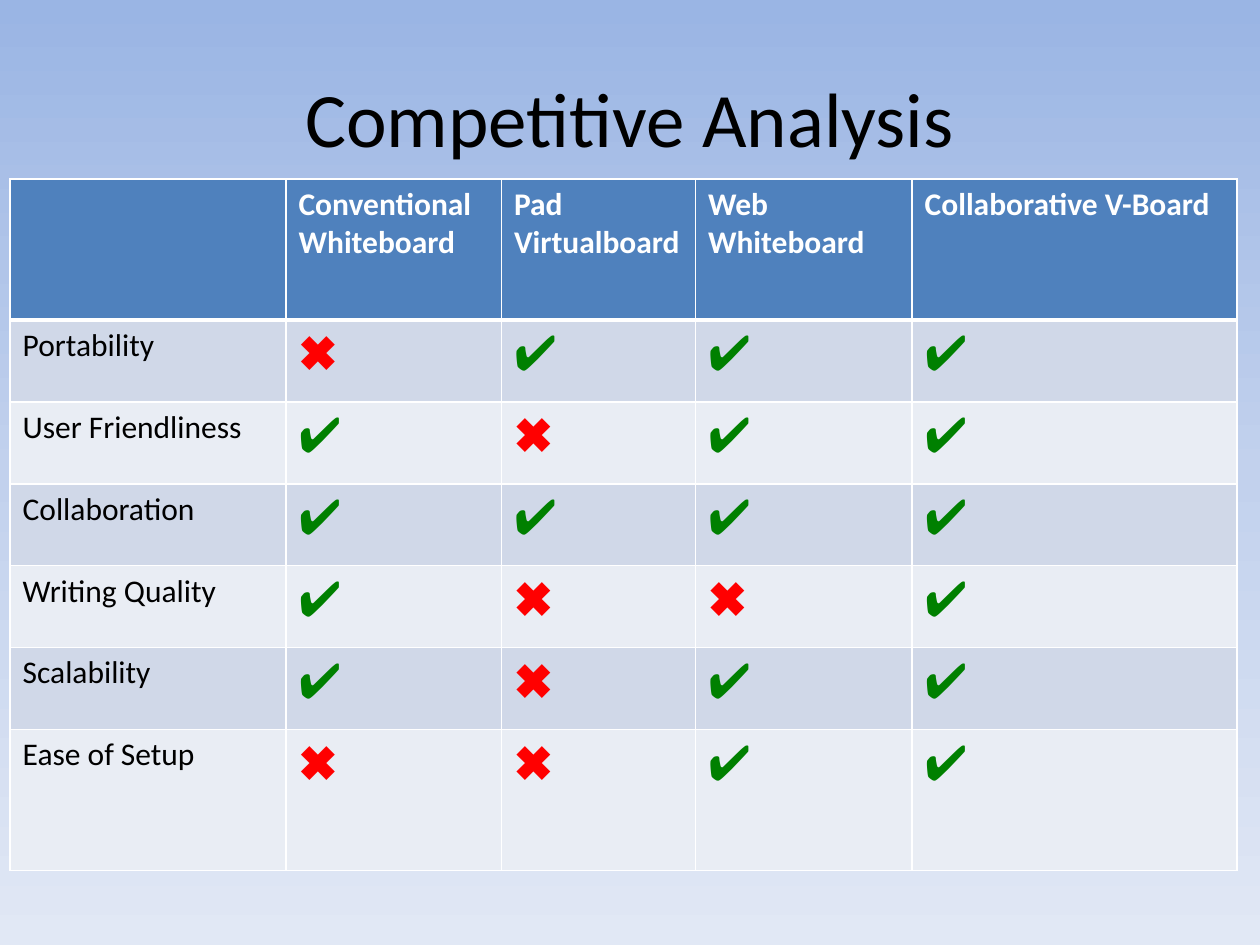
from copy import deepcopy

from lxml.etree import SubElement
from pptx import Presentation
from pptx.dml.color import RGBColor
from pptx.enum.text import MSO_ANCHOR, PP_ALIGN
from pptx.oxml.ns import qn
from pptx.util import Inches, Pt

COLORS = {
    "sky_top": "9AB5E4", "sky_middle": "C2D1ED", "sky_bottom": "E1E8F5",
    "header": "4F81BD", "band_dark": "D0D8E8", "band_light": "E9EDF4",
    "white": "FFFFFF", "black": "000000", "yes": "008000", "no": "FF0000",
}
YES, NO = "✔", "✖"

PRODUCTS = ["", "Conventional Whiteboard", "Pad Virtualboard",
            "Web Whiteboard", "Collaborative V-Board"]
# One letter per product: y = has the feature, n = lacks it
FEATURES = {
    "Portability": "nyyy",
    "User Friendliness": "ynyy",
    "Collaboration": "yyyy",
    "Writing Quality": "ynny",
    "Scalability": "ynyy",
    "Ease of Setup": "nnyy",
}
COLUMN_WIDTHS = [2.19, 1.71, 1.54, 1.72, 2.58]
ROW_HEIGHTS = [1.12] + [0.65] * 5 + [1.12]


def rgb(name):
    return RGBColor.from_string(COLORS[name])


class SlideBuilder:
    """Holds the text style and the slide being built."""

    font = "Calibri"
    symbol_font = "Arial"

    def __init__(self, slide):
        self.slide = slide

    def format_text(self, text_frame, size, color, bold=False, font=None):
        for paragraph in text_frame.paragraphs:
            for run in paragraph.runs:
                run.font.name = font or self.font
                run.font.size = Pt(size)
                run.font.bold = bold
                run.font.color.rgb = rgb(color)

    def gradient_background(self, top, middle, bottom):
        fill = self.slide.background.fill
        fill.gradient()
        fill.gradient_angle = 270
        # A third stop halfway between the two default ones
        stop_list = self.slide.element.find(".//" + qn("a:gsLst"))
        stop_list.insert(1, deepcopy(stop_list[0]))
        for index, color in enumerate((top, middle, bottom)):
            stop = fill.gradient_stops[index]
            stop.color.rgb = rgb(color)
            stop.position = index / 2

    def title(self, text, left, top, width, height):
        shape = self.slide.shapes.title
        shape.left, shape.top = Inches(left), Inches(top)
        shape.width, shape.height = Inches(width), Inches(height)
        text_frame = shape.text_frame
        text_frame.text = text
        text_frame.vertical_anchor = MSO_ANCHOR.MIDDLE
        text_frame.paragraphs[0].alignment = PP_ALIGN.CENTER
        self.format_text(text_frame, 44, "black")

    def table(self, left, top, column_widths, row_heights):
        table = self.slide.shapes.add_table(
            len(row_heights), len(column_widths), Inches(left), Inches(top),
            Inches(sum(column_widths)), Inches(sum(row_heights))).table
        for column, width in zip(table.columns, column_widths):
            column.width = Inches(width)
        for row, height in zip(table.rows, row_heights):
            row.height = Inches(height)
        return table

    def cell(self, cell, text, fill, top=1, bottom=1, **style):
        cell.text = text
        self.format_text(cell.text_frame, **style)
        self.borders(cell, top, bottom)
        cell.fill.solid()
        cell.fill.fore_color.rgb = rgb(fill)

    def borders(self, cell, top, bottom):
        properties = cell._tc.get_or_add_tcPr()
        for side, width in (("L", 1), ("R", 1), ("T", top), ("B", bottom)):
            line = SubElement(properties, qn("a:ln" + side), w=str(Pt(width)))
            solid = SubElement(line, qn("a:solidFill"))
            SubElement(solid, qn("a:srgbClr"), val=COLORS["white"])


def main():
    presentation = Presentation()
    presentation.slide_width = Inches(10)
    presentation.slide_height = Inches(7.5)
    title_only = presentation.slide_layouts[5]
    builder = SlideBuilder(presentation.slides.add_slide(title_only))

    # Background and title
    builder.gradient_background("sky_top", "sky_middle", "sky_bottom")
    builder.title("Competitive Analysis", 0.5, 0.3, 9, 1.25)

    # Header row
    table = builder.table(0.08, 1.42, COLUMN_WIDTHS, ROW_HEIGHTS)
    for column, product in enumerate(PRODUCTS):
        builder.cell(table.cell(0, column), product, "header", bottom=3,
                     size=18, color="white", bold=True)

    # Feature rows with alternating bands
    for row, (feature, marks) in enumerate(FEATURES.items(), start=1):
        band = "band_dark" if row % 2 else "band_light"
        top = 3 if row == 1 else 1
        builder.cell(table.cell(row, 0), feature, band, top,
                     size=18, color="black")
        for column, mark in enumerate(marks, start=1):
            symbol, color = (YES, "yes") if mark == "y" else (NO, "no")
            builder.cell(table.cell(row, column), symbol, band, top,
                         size=28, color=color, font=builder.symbol_font)

    presentation.save("out.pptx")


if __name__ == "__main__":
    main()
